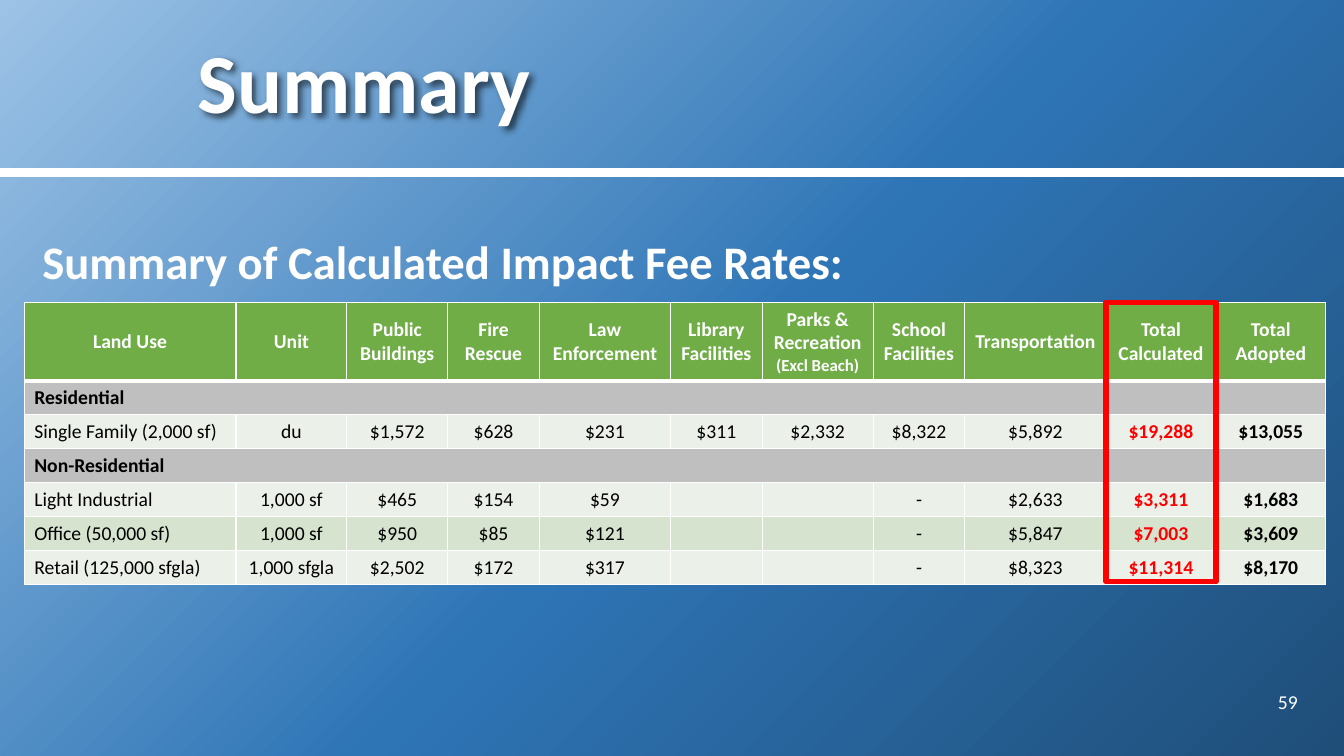
import pptx
import pptx.util
import pptx.oxml
import pptx.oxml.ns
import pptx.dml.color
import pptx.enum.text
import pptx.enum.shapes
import lxml.etree

WIDE, HIGH = 13.33, 7.5
FONT = "Calibri"
HUE = {
    "white": "FFFFFF", "black": "000000", "red": "FF0000",
    "head": "70AD47", "group": "BFBFBF", "pale": "EBF1E9", "band": "D5E3CF",
    "sky": "9DC3E6", "blue": "2E75B6", "navy": "1F4E79",
}
COLS = [2.1, 1.1, 1, 0.91, 1.3, 0.91, 1.1, 0.91, 1.4, 1.09, 1.09]
HEAD_ROW = 0.77
TOTAL = 9
HEADS = ["Land Use", "Unit", "Public Buildings", "Fire Rescue", "Law Enforcement",
         "Library Facilities", "Parks & Recreation ", "School Facilities",
         "Transportation", "Total Calculated", "Total Adopted"]
NOTES = {"Parks & Recreation ": "(Excl Beach)"}
ROWS = [
    ("head", HEADS),
    ("group", ["Residential"]),
    ("pale", ["Single Family (2,000 sf)", "du", "$1,572", "$628", "$231", "$311",
              "$2,332", "$8,322", "$5,892", "$19,288", "$13,055"]),
    ("group", ["Non-Residential"]),
    ("pale", ["Light Industrial", "1,000 sf", "$465", "$154", "$59", "", "", "-",
              "$2,633", "$3,311", "$1,683"]),
    ("band", ["Office (50,000 sf)", "1,000 sf", "$950", "$85", "$121", "", "", "-",
              "$5,847", "$7,003", "$3,609"]),
    ("pale", ["Retail (125,000 sfgla)", "1,000 sfgla", "$2,502", "$172", "$317", "", "",
              "-", "$8,323", "$11,314", "$8,170"]),
]
ALIGN = pptx.enum.text.PP_ALIGN
MID = pptx.enum.text.MSO_ANCHOR.MIDDLE
inch = pptx.util.Inches
qn = pptx.oxml.ns.qn


def tint(name):
    """Return the named colour."""
    return pptx.dml.color.RGBColor.from_string(HUE[name])


def xml(text):
    """Build one drawing element from its inner text."""
    tag, rest = text.split(" ", 1)
    space = pptx.oxml.ns.nsdecls("a")
    return pptx.oxml.parse_xml(f"<a:{tag} {space} {rest}</a:{tag}>")


def place(shape, box):
    """Move a shape to a box given in inches."""
    shape.left, shape.top, shape.width, shape.height = map(inch, box)


def style(run, size, hue="white", bold=True):
    """Format one run."""
    font = run.font
    font.name, font.size, font.bold = FONT, pptx.util.Pt(size), bold
    font.color.rgb = tint(hue)


def write(shape, text, size, bold=True, align=ALIGN.LEFT):
    """Put one formatted line into a shape."""
    frame = shape.text_frame
    frame.text, frame.word_wrap = text, True
    frame.auto_size = pptx.enum.text.MSO_AUTO_SIZE.NONE
    para = frame.paragraphs[0]
    para.alignment = align
    style(para.runs[0], size, bold=bold)
    return para


def back(slide):
    """Fill the slide with a gradient spreading from the top left corner."""
    slide.background.fill.gradient()
    grad = slide.element.find(".//" + qn("a:gradFill"))
    stops = "".join(f'<a:gs pos="{pos * 1000}"><a:srgbClr val="{HUE[name]}"/></a:gs>'
                    for pos, name in ((0, "sky"), (53, "blue"), (100, "navy")))
    grad.getparent().replace(grad, xml(
        f'gradFill rotWithShape="1"><a:gsLst>{stops}</a:gsLst><a:path path="circle">'
        '<a:fillToRect r="100000" b="100000"/></a:path>'
        '<a:tileRect l="-100000" t="-100000"/>'))


def banner(slide, box):
    """Set the title in its box, with a white rule along the lower edge."""
    left, top, width, height = box
    base = inch(top + height)
    rule = slide.shapes.add_connector(pptx.enum.shapes.MSO_CONNECTOR.STRAIGHT,
                                      0, base, inch(WIDE), base)
    rule.line.color.rgb, rule.line.width = tint("white"), pptx.util.Pt(6)
    lxml.etree.SubElement(rule.element.spPr, qn("a:effectLst"))
    title = slide.shapes.title
    place(title, box)
    para = write(title, "Summary", 60)
    para.line_spacing = 0.9
    title.text_frame.vertical_anchor = MID
    title.element.spPr.append(xml(
        'effectLst ><a:outerShdw blurRad="50800" dist="38100" dir="2700000">'
        '<a:srgbClr val="000000"><a:alpha val="60000"/></a:srgbClr></a:outerShdw>'))


def lead(slide, box):
    """Set the heading above the table."""
    body = slide.placeholders[1]
    place(body, box)
    para = write(body, "Summary of Calculated Impact Fee Rates:", 33.3)
    props = para._p.get_or_add_pPr()
    props.set("marL", "0")
    props.set("indent", "0")
    lxml.etree.SubElement(props, qn("a:buNone"))
    para.line_spacing, para.space_before = 1.1, pptx.util.Pt(0)


def edge(cell, row):
    """Draw white borders, thick between the header and the rows."""
    thick = {(0, "B"), (1, "T")}
    for spot, side in enumerate("LRTB"):
        width = pptx.util.Pt(3 if (row, side) in thick else 1)
        cell._tc.get_or_add_tcPr().insert(spot, xml(
            f'ln{side} w="{width}"><a:solidFill><a:srgbClr val="{HUE["white"]}"/>'
            '</a:solidFill>'))


def entry(cell, text, kind, col):
    """Fill and format one table cell."""
    cell.fill.solid()
    cell.fill.fore_color.rgb = tint(kind)
    cell.vertical_anchor = MID
    para = cell.text_frame.paragraphs[0]
    para.alignment = ALIGN.CENTER if kind == "head" or col else ALIGN.LEFT
    if not text:
        lxml.etree.SubElement(para._p, qn("a:endParaRPr")).set("sz", "1400")
        return
    para.text = text
    if kind == "head":
        hue = "white"
    else:
        hue = "red" if col == TOTAL else "black"
    style(para.runs[0], 14, hue, kind in ("head", "group") or col >= TOTAL)
    if text in NOTES:
        note = para.add_run()
        note.text = NOTES[text]
        style(note, 12)


def rates(slide, box):
    """Lay out the fee table and frame its calculated total."""
    left, top, width, height = box
    table = slide.shapes.add_table(len(ROWS), len(COLS), *map(inch, box)).table
    table.horz_banding = False
    for col, size in enumerate(COLS):
        table.columns[col].width = inch(size)
    step = (height - HEAD_ROW) / (len(ROWS) - 1)
    for row, (kind, texts) in enumerate(ROWS):
        table.rows[row].height = inch(step if row else HEAD_ROW)
        for col in range(len(COLS)):
            cell = table.cell(row, col)
            entry(cell, texts[col] if col < len(texts) else "", kind, col)
            edge(cell, row)
        if kind == "group":
            table.cell(row, 0).merge(table.cell(row, len(COLS) - 1))
    frame = slide.shapes.add_shape(
        pptx.enum.shapes.MSO_SHAPE.RECTANGLE, inch(left + sum(COLS[:TOTAL])),
        inch(top), inch(COLS[TOTAL]), inch(height))
    frame.shadow.inherit = False
    frame.fill.background()
    frame.line.color.rgb, frame.line.width = tint("red"), pptx.util.Pt(4)


def folio(slide, box):
    """Set the page number."""
    page = slide.shapes.add_textbox(*map(inch, box))
    write(page, "59", 14, False, ALIGN.RIGHT)
    page.text_frame.vertical_anchor = MID


def main():
    """Build and save the slide."""
    deck = pptx.Presentation()
    deck.slide_width, deck.slide_height = inch(WIDE), inch(HIGH)
    slide = deck.slides.add_slide(deck.slide_layouts[1])
    back(slide)
    banner(slide, (1.86, 0, 11.1, 1.71))
    lead(slide, (0.32, 2.2, 12.78, 0.69))
    rates(slide, (0.24, 3, sum(COLS), 2.77))
    folio(slide, (12.08, 6.76, 0.89, 0.4))
    deck.save("out.pptx")


if __name__ == "__main__":
    main()
